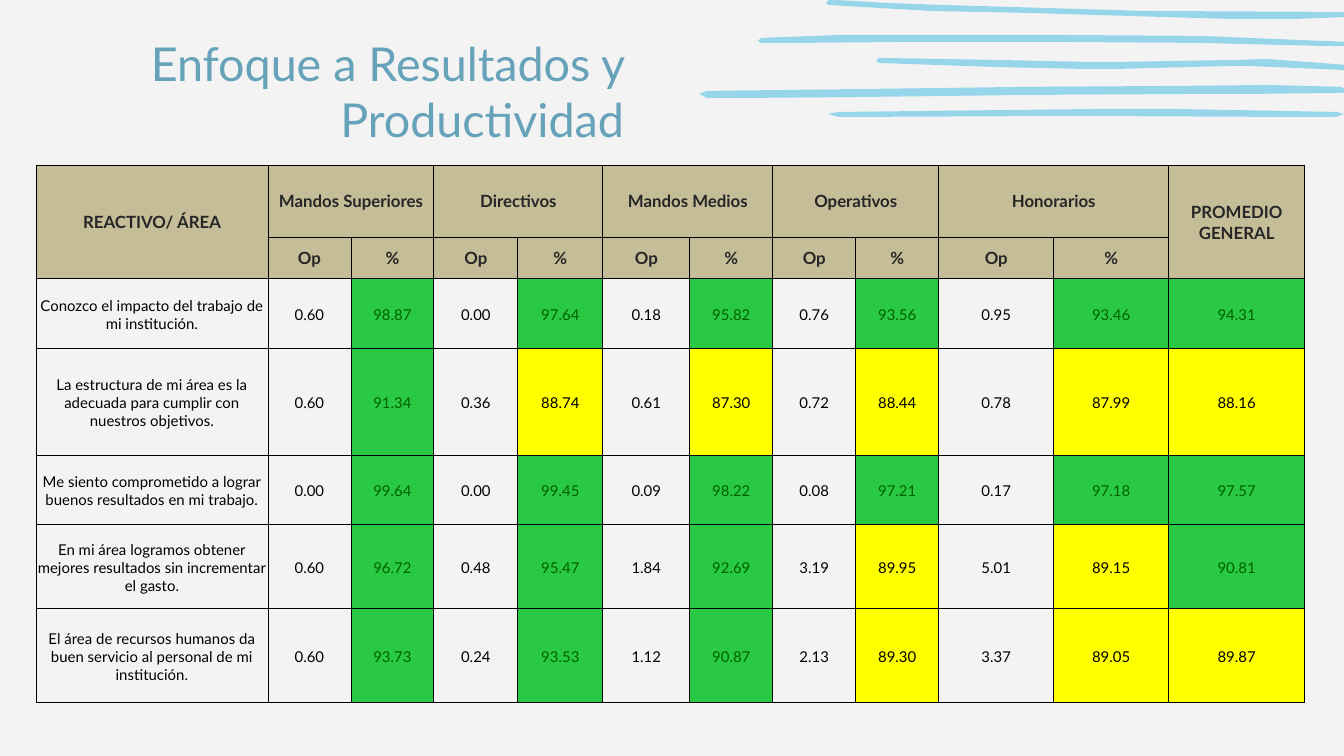
from itertools import accumulate
from lxml.etree import SubElement
from pptx import Presentation
from pptx.dml.color import RGBColor
from pptx.enum.text import MSO_ANCHOR, PP_ALIGN
from pptx.oxml.ns import qn
from pptx.util import Emu, Pt

SCALE = 914400 / 134.4
FONT = "Lato"
AREAS = ["Mandos Superiores", "Directivos", "Mandos Medios", "Operativos", "Honorarios"]
COL_WIDTHS = [232, 83, 83, 84, 85, 87, 83, 83, 83, 115, 115, 136]
ROW_HEIGHTS = [72, 42, 70, 107, 69, 84, 94]
LAST = len(COL_WIDTHS) - 1
ITEMS = [
    ("Conozco el impacto del trabajo de mi institución.",
     "0.60 98.87 0.00 97.64 0.18 95.82 0.76 93.56 0.95 93.46 94.31"),
    ("La estructura de mi área es la adecuada para cumplir con nuestros objetivos.",
     "0.60 91.34 0.36 88.74 0.61 87.30 0.72 88.44 0.78 87.99 88.16"),
    ("Me siento comprometido a lograr buenos resultados en mi trabajo.",
     "0.00 99.64 0.00 99.45 0.09 98.22 0.08 97.21 0.17 97.18 97.57"),
    ("En mi área logramos obtener mejores resultados sin incrementar el gasto.",
     "0.60 96.72 0.48 95.47 1.84 92.69 3.19 89.95 5.01 89.15 90.81"),
    ("El área de recursos humanos da buen servicio al personal de mi institución.",
     "0.60 93.73 0.24 93.53 1.12 90.87 2.13 89.30 3.37 89.05 89.87"),
]
STROKES = [
    [(143, 112), (398, 109), (483, 109), (641, 112), (648, 114), (639, 117),
     (601, 117), (391, 116), (368, 116), (143, 117), (132, 114)],
    [(11, 91), (174, 89), (327, 87), (487, 86), (573, 85), (645, 87), (650, 90), (647, 93),
     (555, 94), (504, 94), (332, 95), (170, 97), (51, 98), (11, 98), (3, 94)],
    [(183, 58), (191, 58), (303, 60), (393, 62), (420, 62), (539, 60), (571, 59), (651, 65),
     (652, 67), (649, 70), (553, 66), (534, 66), (418, 69), (390, 69), (300, 67), (183, 63),
     (180, 61)],
    [(65, 38), (145, 35), (211, 35), (272, 35), (358, 35), (504, 36), (651, 42), (653, 44),
     (651, 46), (625, 46), (504, 43), (358, 42), (284, 42), (211, 42), (101, 43), (65, 43),
     (62, 41)],
    [(133, 0), (140, 0), (191, 3), (249, 5), (449, 11), (651, 12), (653, 15), (651, 17),
     (598, 19), (535, 19), (334, 13), (234, 11), (133, 5), (130, 3)],
]


def px(n):
    return Emu(round(n * SCALE))


def paint(fmt, color):
    fmt.solid()
    fmt.fore_color.rgb = RGBColor.from_string(color)


def write(tf, text, size, color, align, bold=False):
    p = tf.paragraphs[0]
    p.alignment = align
    r = p.add_run()
    r.text = text
    r.font.name = FONT
    r.font.size = Pt(size)
    r.font.bold = bold
    paint(r.font.fill, color)


def add_strokes(s, x, y):
    group = s.shapes.add_group_shape()
    for points in STROKES:
        outline = [(px(x + dx), px(y + dy)) for dx, dy in points]
        builder = group.shapes.build_freeform(*outline[0])
        builder.add_line_segments(outline[1:], close=True)
        sp = builder.convert_to_shape()
        sp.shadow.inherit = False
        paint(sp.fill, "97D5EA")
        sp.line.fill.background()


def add_title(s, x, y, w, h):
    sp = s.shapes.add_textbox(px(x), px(y), px(w), px(h))
    tf = sp.text_frame
    tf.word_wrap = True
    tf.margin_left = tf.margin_right = tf.margin_top = tf.margin_bottom = px(13)
    write(tf, "Enfoque a Resultados y Productividad", 25, "66A2B9", PP_ALIGN.RIGHT)


def frame_cell(cell):
    cell.margin_left = cell.margin_right = cell.margin_top = px(1)
    cell.margin_bottom = 0
    cell.vertical_anchor = MSO_ANCHOR.MIDDLE
    tcPr = cell._tc.get_or_add_tcPr()
    for side in ("lnL", "lnR", "lnT", "lnB"):
        ln = SubElement(tcPr, qn(f"a:{side}"), w=str(Pt(0.5)))
        fill = SubElement(ln, qn("a:solidFill"))
        SubElement(fill, qn("a:srgbClr"), val="000000")


def add_header(table):
    for row in (0, 1):
        for col in range(LAST + 1):
            paint(table.cell(row, col).fill, "C4BD97")
    labels = {(0, 0): "REACTIVO/ ÁREA", (0, LAST): "PROMEDIO GENERAL"}
    for col in (0, LAST):
        table.cell(0, col).merge(table.cell(1, col))
    for i, area in enumerate(AREAS):
        col = 1 + 2 * i
        table.cell(0, col).merge(table.cell(0, col + 1))
        labels.update({(0, col): area, (1, col): "Op", (1, col + 1): "%"})
    for (row, col), text in labels.items():
        write(table.cell(row, col).text_frame, text, 9, "262626", PP_ALIGN.CENTER, True)


def add_item(table, row, question, values):
    for col, text in enumerate([question, *values.split()]):
        cell = table.cell(row, col)
        color = "000000"
        if col == LAST or (col and col % 2 == 0):
            high = float(text) >= 90
            paint(cell.fill, "29C944" if high else "FFFF00")
            color = "006100" if high else color
        else:
            cell.fill.background()
        write(cell.text_frame, text, 8, color, PP_ALIGN.CENTER)


def add_results(s, x, y):
    w, h = (list(accumulate(sizes))[-1] for sizes in (COL_WIDTHS, ROW_HEIGHTS))
    table = s.shapes.add_table(len(ROW_HEIGHTS), len(COL_WIDTHS),
                               px(x), px(y), px(w), px(h)).table
    table.first_row = table.horz_banding = False
    for column, width in zip(table.columns, COL_WIDTHS):
        column.width = px(width)
    for row, height in zip(table.rows, ROW_HEIGHTS):
        row.height = px(height)
    for cell in table.iter_cells():
        frame_cell(cell)
    add_header(table)
    for row, (question, values) in enumerate(ITEMS, 2):
        add_item(table, row, question, values)


def main():
    prs = Presentation()
    prs.slide_width, prs.slide_height = px(1344), px(756)
    s = prs.slides.add_slide(prs.slide_layouts[6])
    paint(s.background.fill, "F3F3F3")
    add_strokes(s, 696, 0)
    add_title(s, -120, 22, 757, 83)
    add_results(s, 36, 165)
    prs.save("out.pptx")


if __name__ == "__main__":
    main()
